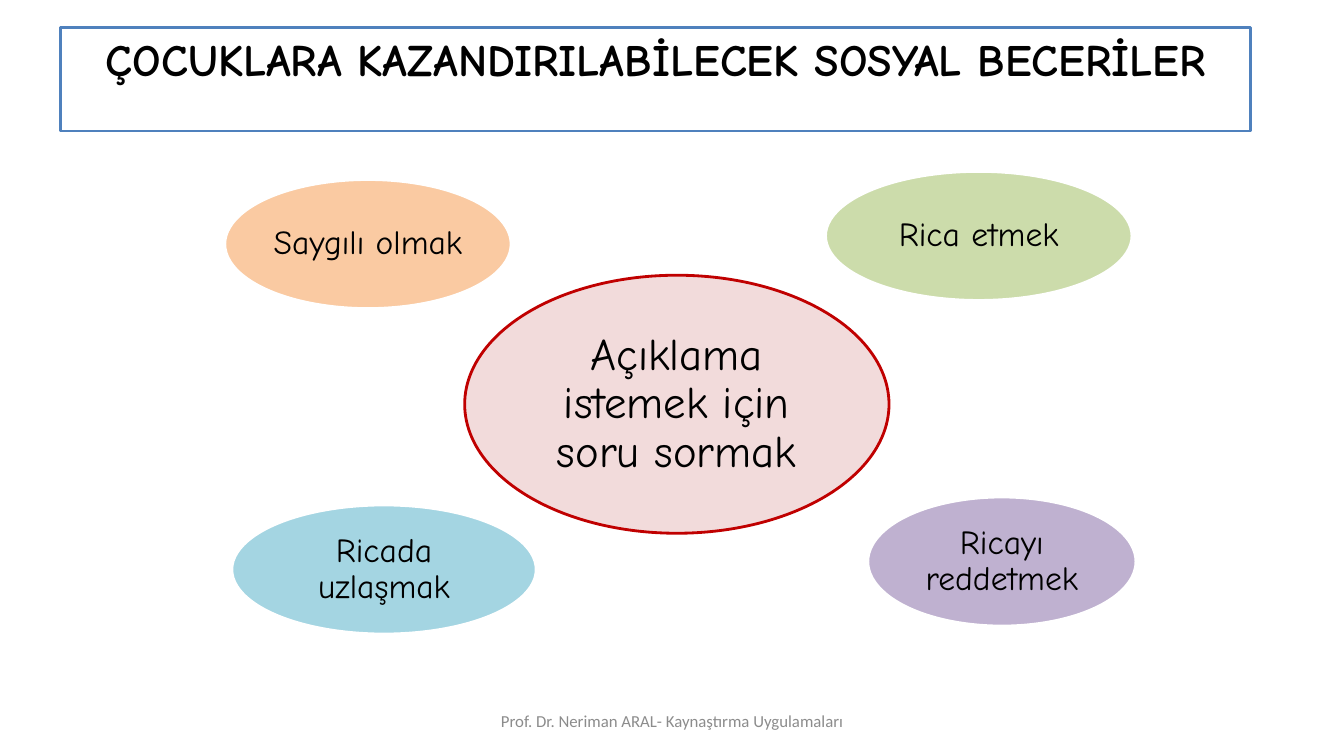
"""Builds a slide of social skills that children can be taught."""
from dataclasses import dataclass

from lxml.etree import SubElement
from pptx import Presentation
from pptx.dml.color import RGBColor
from pptx.enum.shapes import MSO_SHAPE
from pptx.enum.text import MSO_ANCHOR, MSO_AUTO_SIZE, PP_ALIGN
from pptx.oxml.ns import qn
from pptx.util import Pt

BLACK = RGBColor(0x00, 0x00, 0x00)
WHITE = RGBColor(0xFF, 0xFF, 0xFF)
GREY = RGBColor(0x8C, 0x8C, 0x8C)
BLUE = RGBColor(0x4F, 0x81, 0xBD)
RED = RGBColor(0xC0, 0x00, 0x00)
PINK = RGBColor(0xE6, 0xB9, 0xB8)
GREEN = RGBColor(0x9B, 0xBB, 0x59)
PURPLE = RGBColor(0x80, 0x64, 0xA2)
TEAL = RGBColor(0x4B, 0xAC, 0xC6)
ORANGE = RGBColor(0xF7, 0x96, 0x46)


@dataclass(frozen=True)
class Skill:
    """One ellipse with its text, measured in points."""
    text: str
    left: float
    top: float
    width: float
    fill: RGBColor
    height: float = 92.2
    line: RGBColor = WHITE
    size: float = 24
    inset: float = 2.4


SKILLS = [
    Skill("Açıklama istemek için soru sormak", 331.9, 196.6, 303.1, PINK,
          height=184.3, line=RED, size=32, inset=3.2),
    Skill("Rica etmek", 589.7, 122.4, 218.9, GREEN),
    Skill("Ricayı reddetmek", 619.9, 355, 191.5, PURPLE),
    Skill("Ricada uzlaşmak", 165.6, 360.7, 217.4, TEAL),
    Skill("Saygılı olmak", 160.6, 128.2, 204.5, ORANGE),
]


def write(sp, text: str, *, size: float, font: str = "Comic Neue",
          color: RGBColor = BLACK, bold: bool = False, spacing: float = 1.0,
          anchor=MSO_ANCHOR.MIDDLE, inset: float | None = None) -> None:
    """Put one centred paragraph into a shape."""
    tf = sp.text_frame
    tf.word_wrap = True
    tf.auto_size = MSO_AUTO_SIZE.NONE
    tf.vertical_anchor = anchor
    if inset is not None:
        tf.margin_left = tf.margin_right = Pt(inset)
        tf.margin_top = tf.margin_bottom = Pt(inset)
    p = tf.paragraphs[0]
    p.alignment = PP_ALIGN.CENTER
    p.line_spacing = spacing
    r = p.add_run()
    r.text = text
    r.font.name = font
    r.font.size = Pt(size)
    r.font.bold = bold
    r.font.color.rgb = color


def paint(sp, fill: RGBColor, line: RGBColor, alpha: int = 100) -> None:
    """Give a shape its fill, opacity in percent and outline."""
    sp.fill.solid()
    sp.fill.fore_color.rgb = fill
    if alpha < 100:
        color = sp.fill._xPr.find(f".//{qn('a:srgbClr')}")
        SubElement(color, qn("a:alpha")).set("val", str(alpha * 1000))
    sp.line.color.rgb = line
    sp.line.width = Pt(2)


def add_skill(s, skill: Skill) -> None:
    """Draw one half-transparent ellipse."""
    sp = s.shapes.add_shape(MSO_SHAPE.OVAL, Pt(skill.left), Pt(skill.top),
                            Pt(skill.width), Pt(skill.height))
    sp.shadow.inherit = False
    paint(sp, skill.fill, skill.line, alpha=50)
    write(sp, skill.text, size=skill.size, spacing=0.9, inset=skill.inset)


def add_title(s, text: str) -> None:
    """Fill the framed title."""
    sp = s.shapes.title
    sp.left, sp.top, sp.width, sp.height = Pt(43.2), Pt(19.4), Pt(850.3), Pt(74.2)
    paint(sp, WHITE, BLUE)
    write(sp, text, size=32, bold=True, anchor=MSO_ANCHOR.TOP)


def add_footer(s, text: str) -> None:
    """Write the line at the foot of the slide."""
    sp = s.shapes.add_textbox(Pt(328.3), Pt(500.4), Pt(303.8), Pt(28.8))
    write(sp, text, size=12, font="Calibri", color=GREY)


def main() -> None:
    """Build and save the presentation."""
    prs = Presentation()
    prs.slide_width, prs.slide_height = Pt(960), Pt(540)
    s = prs.slides.add_slide(prs.slide_layouts[5])
    add_title(s, "ÇOCUKLARA KAZANDIRILABİLECEK SOSYAL BECERİLER")
    for skill in SKILLS:
        add_skill(s, skill)
    add_footer(s, "Prof. Dr. Neriman ARAL- Kaynaştırma Uygulamaları")
    prs.save("out.pptx")


if __name__ == "__main__":
    main()
